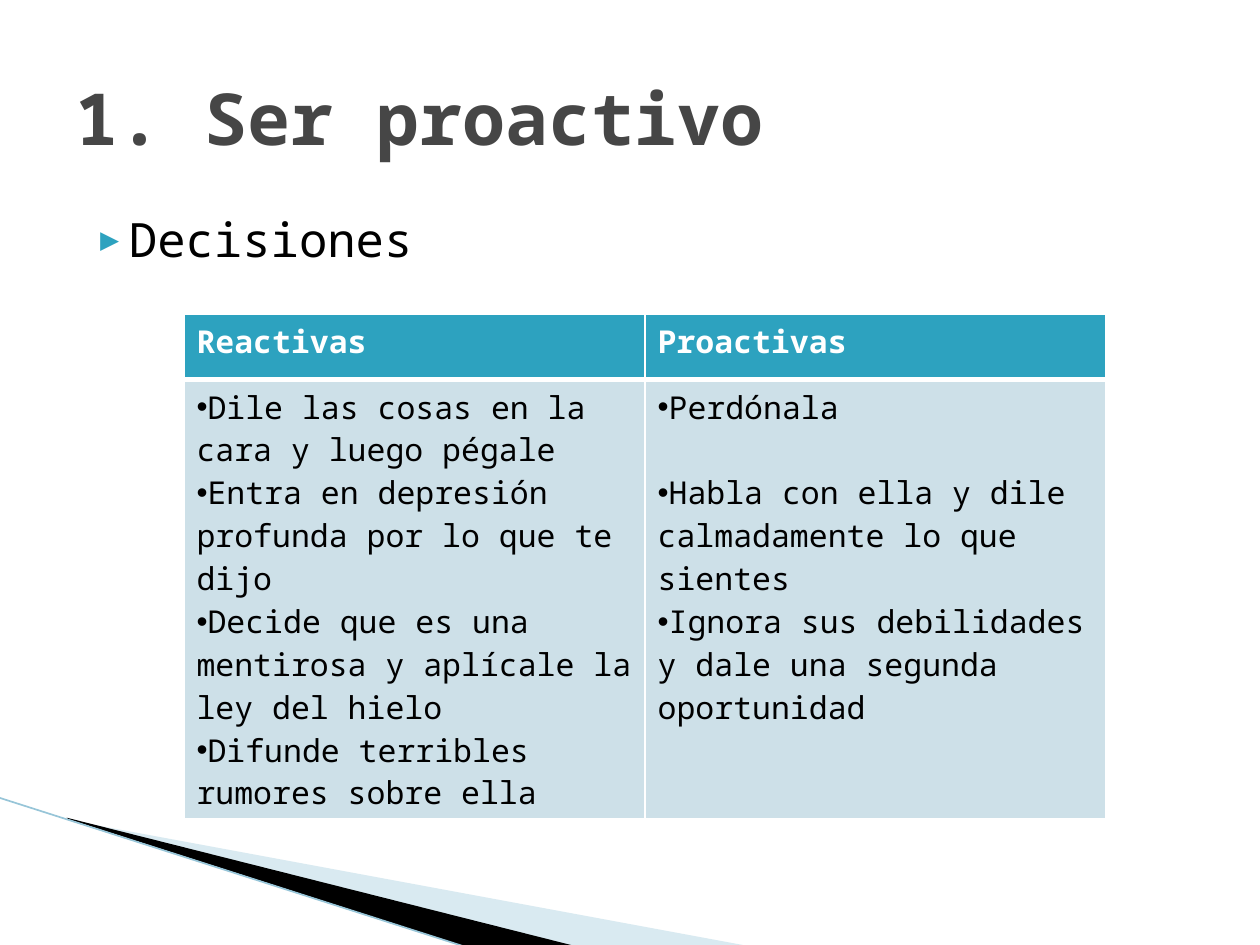
from dataclasses import dataclass

from lxml.etree import SubElement
from pptx import Presentation
from pptx.dml.color import RGBColor
from pptx.enum.shapes import MSO_CONNECTOR
from pptx.enum.text import MSO_ANCHOR
from pptx.oxml.ns import qn
from pptx.util import Inches, Pt


@dataclass(frozen=True)
class Theme:
    """Hold the typefaces, type sizes and colours of the slide."""
    typeface: str = "Noto Sans Mono"
    dot_typeface: str = "Arial"
    title_size: int = 41
    body_size: int = 27
    table_size: int = 18
    title: str = "464646"
    text: str = "000000"
    white: str = "FFFFFF"
    accent: str = "2DA2BF"
    cell: str = "CDE0E8"
    pale: str = "A0CBDC"
    edge: str = "97C5D8"


THEME = Theme()
ROW_HEIGHTS = (0.52, 3.49)
HEADINGS = ["Reactivas", "Proactivas"]
DECISIONS = [
    [
        ("Dile las cosas en la cara y luego pégale", 0),
        ("Entra en depresión profunda por lo que te dijo", 0),
        ("Decide que es una mentirosa y aplícale la ley del hielo", 0),
        ("Difunde terribles rumores sobre ella", 0),
    ],
    [
        ("Perdónala", 0),
        ("Habla con ella y dile calmadamente lo que sientes", 24.5),
        ("Ignora sus debilidades y dale una segunda oportunidad", 0),
    ],
]


def add_element(parent, tag, **attributes):
    """Append a DrawingML element to its parent."""
    return SubElement(parent, qn(tag), attributes)


def set_fill(fill, color):
    """Make a fill solid in the given colour."""
    fill.solid()
    fill.fore_color.rgb = RGBColor.from_string(color)


def write_span(para, text, size, color, bold=False):
    """Write one formatted span into a paragraph."""
    span = para.add_run()
    span.text = text
    formats = {"name": THEME.typeface, "size": Pt(size), "bold": bold}
    for name, value in formats.items():
        setattr(span.font, name, value)
    span.font.color.rgb = RGBColor.from_string(color)


def add_bullet(para, character, typeface, color, percent=100):
    """Give a paragraph a bullet character."""
    properties = para._p.get_or_add_pPr()
    holder = add_element(properties, "a:buClr")
    add_element(holder, "a:srgbClr", val=color)
    add_element(properties, "a:buSzPct", val=str(percent * 1000))
    add_element(properties, "a:buFont", typeface=typeface)
    add_element(properties, "a:buChar", char=character)
    return properties


def add_text_box(page, left, top, width, height, anchor):
    """Add a wrapping text box and return its first paragraph."""
    box = page.shapes.add_textbox(*map(Inches, (left, top, width, height)))
    formats = {"word_wrap": True, "vertical_anchor": anchor}
    for name, value in formats.items():
        setattr(box.text_frame, name, value)
    return box.text_frame.paragraphs[0]


def add_wedge(page, points, color, opacity=100):
    """Draw a filled outline through the points."""
    corners = [(Inches(x), Inches(y)) for x, y in points]
    builder = page.shapes.build_freeform(*corners[0], scale=1.0)
    builder.add_line_segments(corners[1:], close=True)
    wedge = builder.convert_to_shape()
    wedge.shadow.inherit = False
    wedge.line.fill.background()
    set_fill(wedge.fill, color)
    if opacity < 100:
        shade = wedge._element.spPr.find(".//" + qn("a:srgbClr"))
        add_element(shade, "a:alpha", val=str(opacity * 1000))


def add_edge(page, start, end):
    """Draw the thin line along the corner decoration."""
    edge = page.shapes.add_connector(
        MSO_CONNECTOR.STRAIGHT, *map(Inches, start + end)
    )
    edge.line.width = Pt(0.95)
    edge.line.color.rgb = RGBColor.from_string(THEME.edge)
    add_element(edge._element.spPr, "a:effectLst")


def style_cell(cell, color, widths):
    """Set the white borders and the fill of a cell."""
    properties = cell._tc.get_or_add_tcPr()
    for side, width in zip("LRTB", widths):
        border = add_element(properties, f"a:ln{side}", w=str(Pt(width)))
        holder = add_element(border, "a:solidFill")
        add_element(holder, "a:srgbClr", val=THEME.white)
    set_fill(cell.fill, color)


def add_decision_table(page):
    """Add the table that compares the two kinds of decision."""
    frame = page.shapes.add_table(
        len(ROW_HEIGHTS), len(HEADINGS),
        *map(Inches, (1.46, 2.49, 7.32, sum(ROW_HEIGHTS)))
    )
    table = frame.table
    for row, height in zip(table.rows, ROW_HEIGHTS):
        row.height = Inches(height)
    for column, (heading, decisions) in enumerate(zip(HEADINGS, DECISIONS)):
        header, body = table.cell(0, column), table.cell(1, column)
        style_cell(header, THEME.accent, (1, 1, 1, 3))
        style_cell(body, THEME.cell, (1, 1, 3, 1))
        write_span(header.text_frame.paragraphs[0], heading,
                   THEME.table_size, THEME.white, bold=True)
        for index, (decision, gap) in enumerate(decisions):
            content = body.text_frame
            para = content.add_paragraph() if index else content.paragraphs[0]
            if gap:
                para.space_before = Pt(gap)
            add_bullet(para, "•", THEME.dot_typeface, THEME.text)
            write_span(para, decision, THEME.table_size, THEME.text)


def main():
    """Build the slide and save the deck."""
    deck = Presentation()
    deck.slide_width, deck.slide_height = Inches(10), Inches(7.5)
    page = deck.slides.add_slide(deck.slide_layouts[6])

    add_wedge(page, [(0.55, 6.51), (5.95, 7.51), (4.56, 7.51), (0.55, 6.5)],
              THEME.pale, opacity=40)
    add_wedge(page, [(0.53, 6.49), (4.57, 7.51), (3.72, 7.52), (0.54, 6.5)],
              THEME.text)
    add_edge(page, (-0.01, 6.33), (3.71, 7.52))

    topic = add_text_box(page, 0.5, 1.62, 9, 4.95, MSO_ANCHOR.TOP)
    properties = add_bullet(topic, "▶", THEME.typeface, THEME.accent, 68)
    for name, value in {"marL": 0.4, "indent": -0.28}.items():
        properties.set(name, str(Inches(value)))
    write_span(topic, "Decisiones", THEME.body_size, THEME.text)

    title = add_text_box(page, 0.5, 0.3, 9, 1.25, MSO_ANCHOR.MIDDLE)
    write_span(title, "1. Ser proactivo", THEME.title_size, THEME.title, bold=True)

    add_decision_table(page)
    deck.save("out.pptx")


if __name__ == "__main__":
    main()
